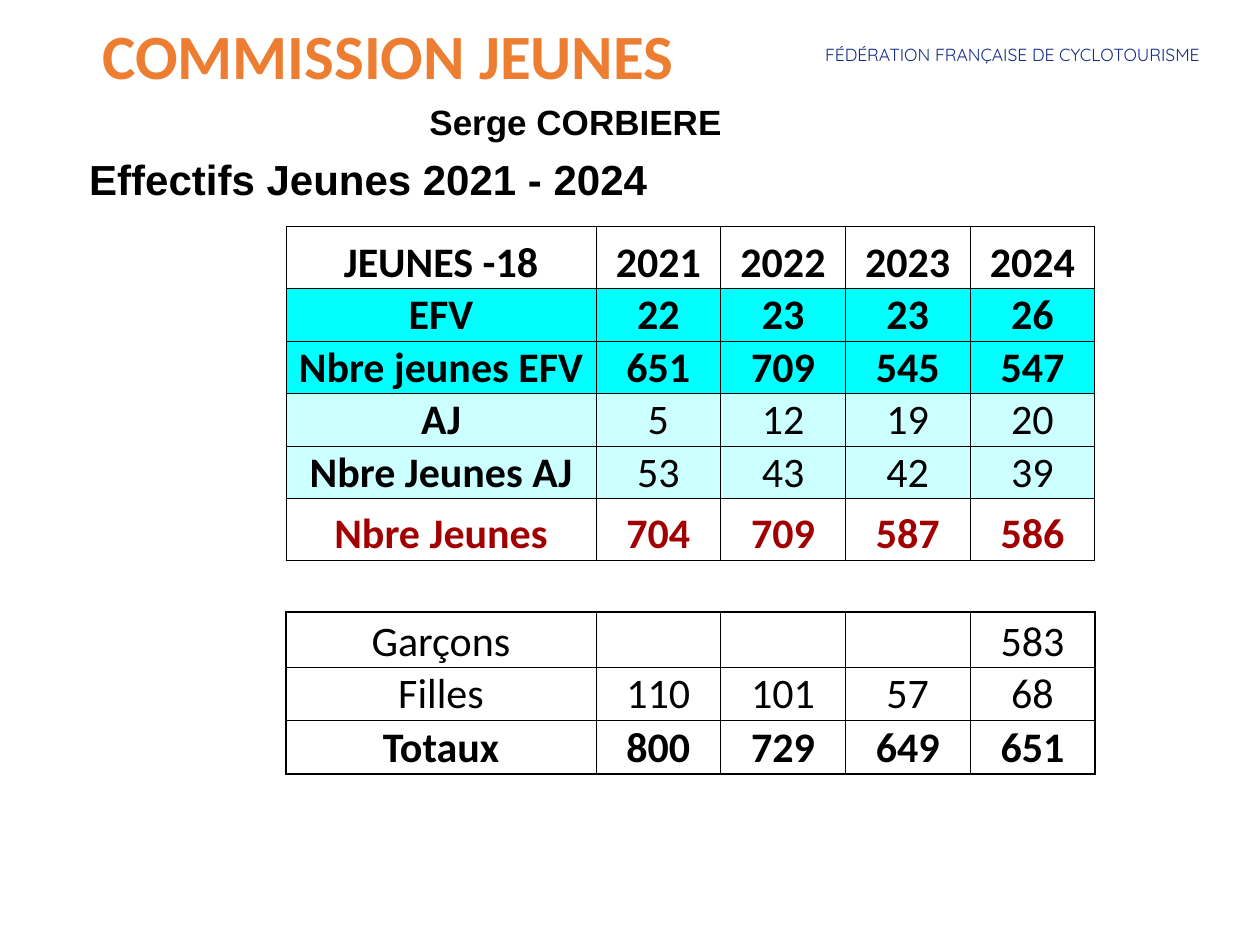
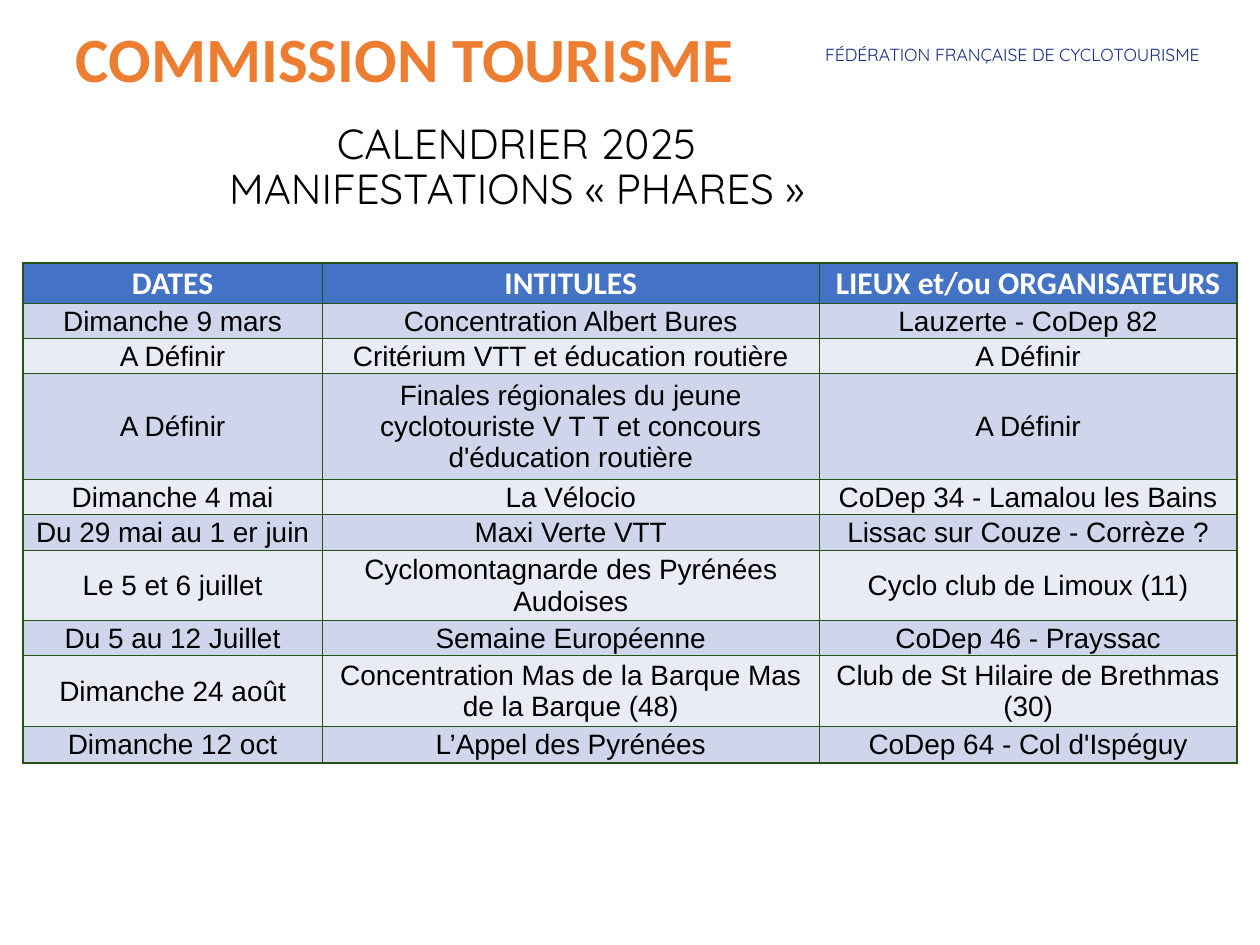
from lxml.etree import SubElement
from pptx import Presentation
from pptx.dml.color import RGBColor
from pptx.enum.text import MSO_ANCHOR as Anchor, MSO_AUTO_SIZE as AutoSize, PP_ALIGN as Align
from pptx.oxml.ns import qn
from pptx.util import Inches, Pt

ORANGE, NAVY, BLACK, WHITE = "ED7D31", "162D86", "000000", "FFFFFF"
RED, CYAN, PALE_CYAN = "A20000", "00FFFF", "CCFFFF"
GREEN, BLUE, BAND_DARK, BAND_LIGHT = "275317", "4472C4", "CFD5EA", "E9EBF5"


def write_box(box, place, text, size, font, color, bold=False, centred=False):
    box.left, box.top, box.width, box.height = [Inches(length) for length in place]
    frame = box.text_frame
    frame.text = text
    frame.word_wrap = True
    frame.auto_size = AutoSize.NONE
    frame.vertical_anchor = Anchor.MIDDLE if centred else Anchor.TOP
    for para in frame.paragraphs:
        para.alignment = Align.CENTER if centred else Align.LEFT
        para.line_spacing = 0.9 if centred else 1.0
        for span in para.runs:
            span.font.size, span.font.name, span.font.bold = Pt(size), font, bold
            span.font.color.rgb = RGBColor.from_string(color)


def write_cell(cell, text, size, font, color, bold, fill, line_color, line_widths, anchor):
    cell.text_frame.text = text
    cell.vertical_anchor = anchor
    cell.margin_left = cell.margin_right = cell.margin_top = Inches(0.01)
    cell.margin_bottom = 0
    para = cell.text_frame.paragraphs[0]
    para.alignment = Align.CENTER
    for span in para.runs:
        span.font.size, span.font.name, span.font.bold = Pt(size), font, bold
        span.font.color.rgb = RGBColor.from_string(color)
    properties = cell._tc.get_or_add_tcPr()
    for side, width in zip("LRTB", line_widths):
        line = SubElement(properties, qn(f"a:ln{side}"), w=str(Pt(width)))
        if width:
            solid = SubElement(line, qn("a:solidFill"))
            SubElement(solid, qn("a:srgbClr"), val=line_color)
        else:
            SubElement(line, qn("a:noFill"))
    if fill:
        cell.fill.solid()
        cell.fill.fore_color.rgb = RGBColor.from_string(fill)
    else:
        cell.fill.background()


deck = Presentation()
deck.slide_width, deck.slide_height = Inches(10), Inches(7.5)
layout = deck.slide_layouts[5]

youth_page = deck.slides.add_slide(layout)
federation = youth_page.shapes.add_textbox(0, 0, 0, 0)
write_box(federation, (6.45, 0.3, 3.47, 0.27), "FÉDÉRATION FRANÇAISE DE CYCLOTOURISME",
          10, "Quicksand", NAVY)
layout.shapes.element.append(federation.element)

write_box(youth_page.shapes.title, (-0.12, 0.2, 6.4, 0.54), "COMMISSION JEUNES",
          36, "Calibri", ORANGE, True, True)
write_box(youth_page.shapes.add_textbox(0, 0, 0, 0), (3.31, 0.75, 2.83, 0.44),
          "Serge CORBIERE", 20, "Arial", BLACK, True)
write_box(youth_page.shapes.add_textbox(0, 0, 0, 0), (0.61, 1.17, 5.28, 0.5),
          "Effectifs Jeunes 2021 - 2024", 24, "Arial", BLACK, True)

youth_rows = [
    (0.49, None, BLACK, True, ["JEUNES -18", "2021", "2022", "2023", "2024"]),
    (0.41, CYAN, BLACK, True, ["EFV", "22", "23", "23", "26"]),
    (0.41, CYAN, BLACK, True, ["Nbre jeunes EFV", "651", "709", "545", "547"]),
    (0.41, PALE_CYAN, BLACK, False, ["AJ", "5", "12", "19", "20"]),
    (0.41, PALE_CYAN, BLACK, False, ["Nbre Jeunes AJ", "53", "43", "42", "39"]),
    (0.49, None, RED, True, ["Nbre Jeunes", "704", "709", "587", "586"]),
    (0.41, None, BLACK, False, [""] * 5),
    (0.44, None, BLACK, False, ["Garçons", "", "", "", "583"]),
    (0.41, None, BLACK, False, ["Filles", "110", "101", "57", "68"]),
    (0.43, None, BLACK, True, ["Totaux", "800", "729", "649", "651"]),
]
gap_row = 6
last_row = len(youth_rows) - 1
youth_table = youth_page.shapes.add_table(
    len(youth_rows), 5, Inches(2.27), Inches(1.8), Inches(6.42), Inches(4.31)).table
youth_table.first_row = youth_table.horz_banding = False
for column, width in zip(youth_table.columns, [2.46] + [0.99] * 4):
    column.width = Inches(width)
for row, (height, fill, color, bold, values) in enumerate(youth_rows):
    youth_table.rows[row].height = Inches(height)
    for column, value in enumerate(values):
        lower = row > gap_row
        inner = 0 if row == gap_row else 0.5
        line_widths = (1 if lower and column == 0 else inner,
                       1 if lower and column == 4 else inner,
                       1 if row == gap_row + 1 else 0.5,
                       1 if row in (gap_row, last_row) else 0.5)
        label_bold = bold or (column == 0 and fill is not None)
        write_cell(youth_table.cell(row, column), value, 24, "Calibri", color, label_bold,
                   fill, BLACK, line_widths, Anchor.BOTTOM)

touring_page = deck.slides.add_slide(layout)
write_box(touring_page.shapes.title, (1.33, 0.96, 5.54, 0.75),
          "CALENDRIER 2025\vMANIFESTATIONS « PHARES »", 24, "Quicksand", BLACK, False, True)
write_box(touring_page.shapes.add_textbox(0, 0, 0, 0), (0.45, 0.22, 5.53, 0.54),
          "COMMISSION TOURISME", 36, "Calibri", ORANGE, True, True)

events = [
    (0.31, "DATES", "INTITULES", "LIEUX et/ou ORGANISATEURS"),
    (0.28, "Dimanche 9 mars", "Concentration Albert Bures", "Lauzerte - CoDep 82"),
    (0.28, "A Définir", "Critérium VTT et éducation routière", "A Définir"),
    (0.84, "A Définir",
     "Finales régionales du jeune cyclotouriste V T T et concours d'éducation routière",
     "A Définir"),
    (0.28, "Dimanche 4 mai", "La Vélocio", "CoDep 34 - Lamalou les Bains"),
    (0.28, "Du 29 mai au 1 er juin", "Maxi Verte VTT", "Lissac sur Couze - Corrèze ?"),
    (0.56, "Le 5 et 6 juillet", "Cyclomontagnarde des Pyrénées Audoises",
     "Cyclo club de Limoux (11)"),
    (0.28, "Du 5 au 12 Juillet", "Semaine Européenne", "CoDep 46 - Prayssac"),
    (0.56, "Dimanche 24 août", "Concentration Mas de la Barque Mas de la Barque (48)",
     "Club de St Hilaire de Brethmas (30)"),
    (0.29, "Dimanche 12 oct", "L’Appel des Pyrénées", "CoDep 64 - Col d'Ispéguy"),
]
event_table = touring_page.shapes.add_table(
    len(events), 3, Inches(0.18), Inches(2.09), Inches(9.64), Inches(3.98)).table
for column, width in zip(event_table.columns, [2.38, 3.94, 3.32]):
    column.width = Inches(width)
for row, (height, *values) in enumerate(events):
    event_table.rows[row].height = Inches(height)
    for column, value in enumerate(values):
        at_edges = (column == 0, column == 2, row == 0, row == len(events) - 1)
        line_widths = [1.5 if at_edge else 0.5 for at_edge in at_edges]
        if row == 0:
            look = (18, "Calibri", WHITE, True, BLUE)
        else:
            look = (16, "Arial", BLACK, False, BAND_DARK if row % 2 else BAND_LIGHT)
        write_cell(event_table.cell(row, column), value, *look, GREEN, line_widths, Anchor.MIDDLE)

deck.save("out.pptx")
